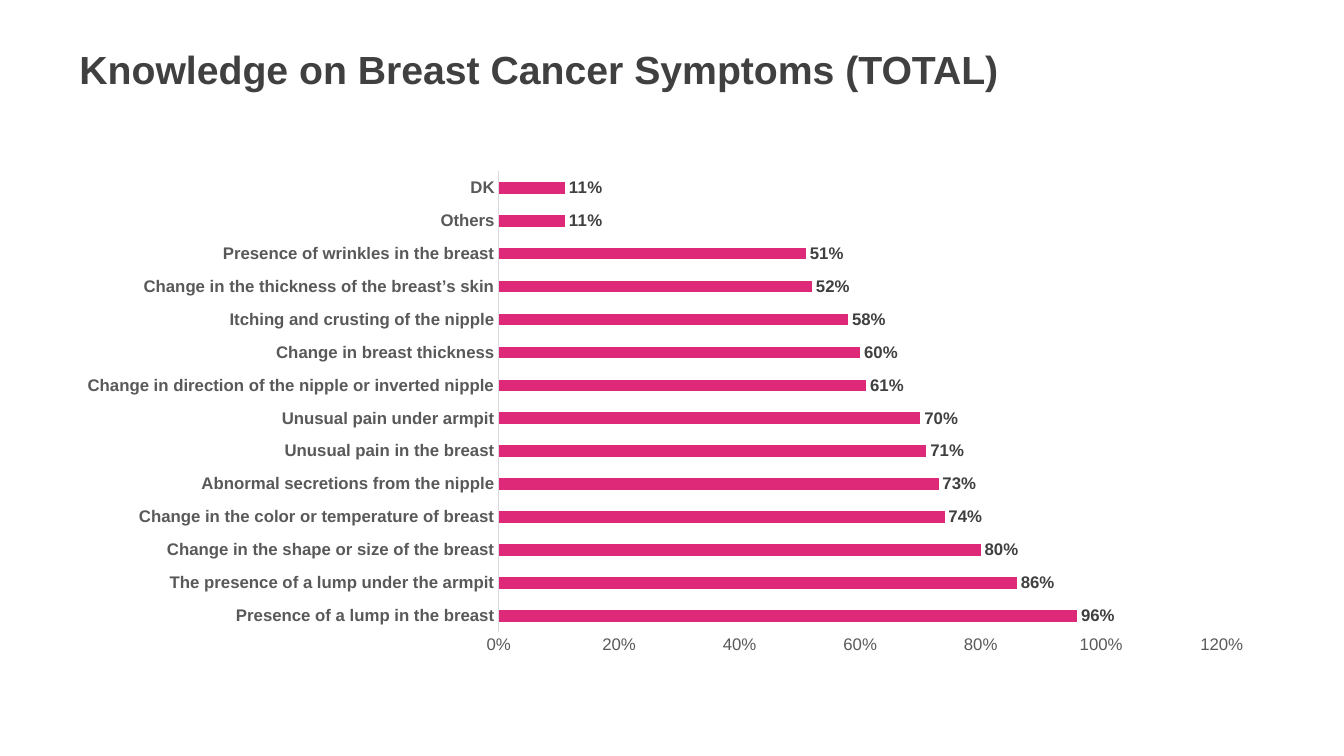
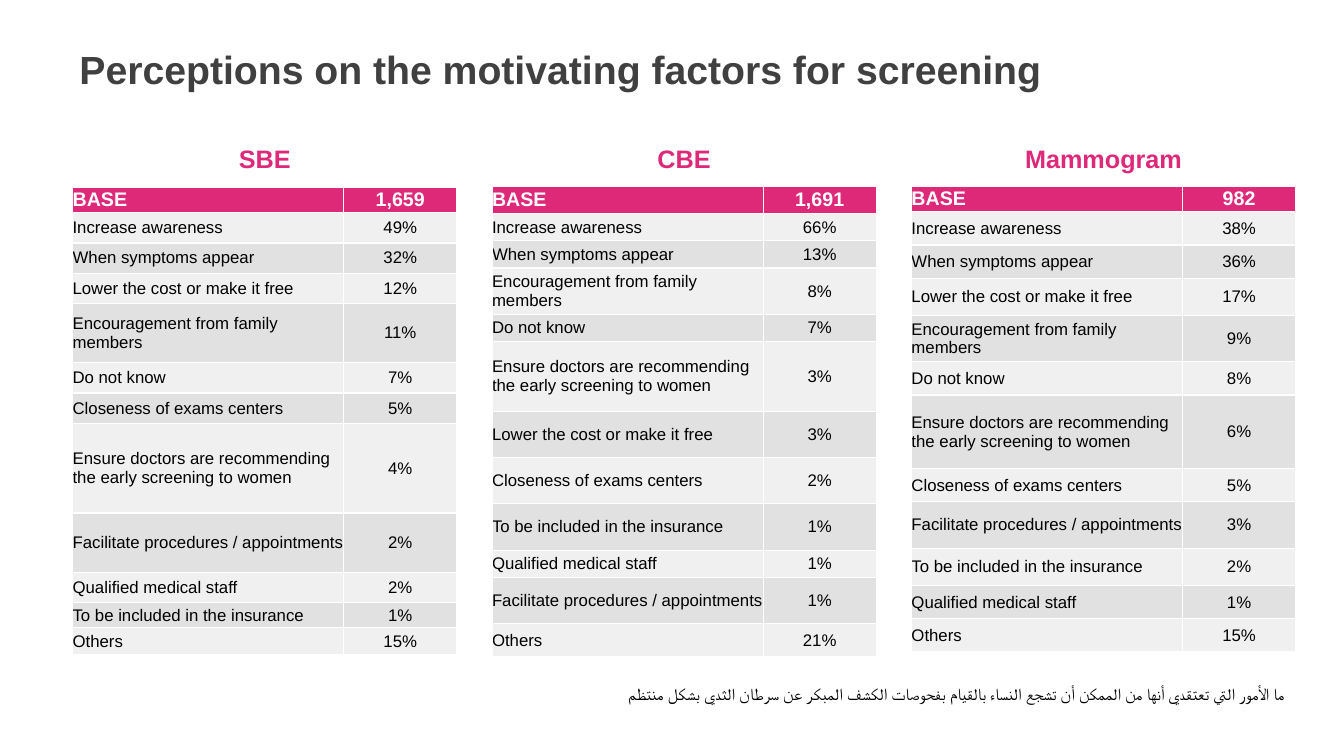
from lxml import etree
from pptx import Presentation
from pptx.chart.data import CategoryChartData
from pptx.dml.color import RGBColor
from pptx.enum.chart import XL_CHART_TYPE, XL_LABEL_POSITION, XL_TICK_MARK
from pptx.enum.text import MSO_ANCHOR, PP_ALIGN
from pptx.oxml.ns import qn
from pptx.util import Inches, Pt

BAR = XL_CHART_TYPE.BAR_CLUSTERED
OUTSIDE = XL_LABEL_POSITION.OUTSIDE_END
NO_TICK = XL_TICK_MARK.NONE
MIDDLE = MSO_ANCHOR.MIDDLE
LEFT, CENTER, RIGHT = PP_ALIGN.LEFT, PP_ALIGN.CENTER, PP_ALIGN.RIGHT

PINK, DARK, GREY, RULE = "DE2979", "404040", "595959", "D9D9D9"
WHITE, BLACK = "FFFFFF", "000000"
BANDS = ("F0F0F0", "E1E1E1")
TITLE_BOX = (0.69, 0.4, 12.06, 0.57)

SYMPTOMS = [
    ("Presence of a lump in the breast", 0.96),
    ("The presence of a lump under the armpit", 0.86),
    ("Change in the shape or size of the breast", 0.8),
    ("Change in the color or temperature of breast", 0.74),
    ("Abnormal secretions from the nipple", 0.73),
    ("Unusual pain in the breast", 0.71),
    ("Unusual pain under armpit", 0.7),
    ("Change in direction of the nipple or inverted nipple", 0.61),
    ("Change in breast thickness", 0.6),
    ("Itching and crusting of the nipple", 0.58),
    ("Change in the thickness of the breast’s skin", 0.52),
    ("Presence of wrinkles in the breast", 0.51),
    ("Others", 0.11),
    ("DK", 0.11),
]

FACTORS = {
    "aware": "Increase awareness",
    "symptoms": "When symptoms appear",
    "cost": "Lower the cost or make it free",
    "family": "Encouragement from family members",
    "unknown": "Do not know",
    "close": "Closeness of exams centers",
    "doctors": "Ensure doctors are recommending the early screening to women",
    "procedures": "Facilitate procedures / appointments",
    "staff": "Qualified medical staff",
    "insurance": "To be included in the insurance",
    "others": "Others",
}

SCREENINGS = [
    ("SBE", "1,659", 1.86, 0.25, [
        ("aware", 49, 0.3), ("symptoms", 32, 0.3), ("cost", 12, 0.3),
        ("family", 11, 0.59), ("unknown", 7, 0.3), ("close", 5, 0.3),
        ("doctors", 4, 0.89), ("procedures", 2, 0.59), ("staff", 2, 0.3),
        ("insurance", 1, 0.25), ("others", 15, 0.27)]),
    ("CBE", "1,691", 1.85, 0.27, [
        ("aware", 66, 0.27), ("symptoms", 13, 0.27), ("family", 8, 0.46),
        ("unknown", 7, 0.27), ("doctors", 3, 0.69), ("cost", 3, 0.46),
        ("close", 2, 0.46), ("insurance", 1, 0.46), ("staff", 1, 0.27),
        ("procedures", 1, 0.46), ("others", 21, 0.33)]),
    ("Mammogram", "982", 1.85, 0.25, [
        ("aware", 38, 0.33), ("symptoms", 36, 0.33), ("cost", 17, 0.37),
        ("family", 9, 0.46), ("unknown", 8, 0.33), ("doctors", 6, 0.73),
        ("close", 5, 0.33), ("procedures", 3, 0.46), ("insurance", 2, 0.37),
        ("staff", 1, 0.33), ("others", 15, 0.33)]),
]
QUESTION = ("ما الأمور التي تعتقدي أنها من الممكن أن تشجع النساء بالقيام "
            "بفحوصات الكشف المبكر عن سرطان الثدي بشكل منتظم")


def rgb(value):
    """Return the colour of a hex string."""
    return RGBColor.from_string(value)


def style_font(font, size, color, bold=False, name="Arial"):
    """Set the size, colour, weight and face of a font."""
    font.size, font.bold, font.name = Pt(size), bold, name
    font.color.rgb = rgb(color)


def write(p, text, size, color, bold=False, align=LEFT, name="Arial"):
    """Add one styled run to a paragraph."""
    p.alignment = align
    r = p.add_run()
    r.text = text
    style_font(r.font, size, color, bold, name)


def add_text(s, box, text, size, color, **style):
    """Place a wrapping text box and return its paragraph."""
    tf = s.shapes.add_textbox(*map(Inches, box)).text_frame
    tf.word_wrap = True
    p = tf.paragraphs[0]
    write(p, text, size, color, **style)
    return p


def add_slide(prs, title):
    """Add a blank slide with the shared title."""
    s = prs.slides.add_slide(prs.slide_layouts[6])
    add_text(s, TITLE_BOX, title, 28, DARK, bold=True)
    return s


def add_bar_chart(s, box, rows):
    """Place a horizontal bar chart of labelled shares."""
    data = CategoryChartData(number_format="0%")
    data.categories = [label for label, _ in rows]
    data.add_series("Series 1", [share for _, share in rows])
    chart = s.shapes.add_chart(BAR, *map(Inches, box), data).chart
    chart.has_title = chart.has_legend = False
    style_font(chart.font, 12, BLACK)

    plot = chart.plots[0]
    plot.gap_width = 182
    plot.vary_by_categories = False
    fill = plot.series[0].format.fill
    fill.solid()
    fill.fore_color.rgb = rgb(PINK)
    plot.has_data_labels = True
    labels = plot.data_labels
    labels.show_value = True
    labels.position = OUTSIDE
    labels.number_format, labels.number_format_is_linked = "0%", False
    style_font(labels.font, 12, DARK, True)

    cats, vals = chart.category_axis, chart.value_axis
    for axis in (cats, vals):
        axis.major_tick_mark = axis.minor_tick_mark = NO_TICK
        axis.has_major_gridlines = False
        style_font(axis.tick_labels.font, 12, GREY, axis is cats)
    cats.format.line.color.rgb = rgb(RULE)
    cats.format.line.width = Pt(0.75)
    vals.format.line.fill.background()
    vals.minimum_scale, vals.maximum_scale, vals.major_unit = 0, 1.2, 0.2
    vals.tick_labels.number_format = "0%"
    vals.tick_labels.number_format_is_linked = False


def add_borders(cell):
    """Draw a thin white line on each side of a cell."""
    tc_pr = cell._tc.get_or_add_tcPr()
    for side in ("a:lnL", "a:lnR", "a:lnT", "a:lnB"):
        ln = etree.SubElement(tc_pr, qn(side), w=str(Pt(1)))
        fill = etree.SubElement(ln, qn("a:solidFill"))
        etree.SubElement(fill, qn("a:srgbClr"), val=WHITE)


def fill_cell(cell, text, fill, align, **style):
    """Write one table cell with its fill and borders."""
    cell.margin_left = cell.margin_right = 0
    cell.margin_top = cell.margin_bottom = 0
    cell.vertical_anchor = MIDDLE
    add_borders(cell)
    cell.fill.solid()
    cell.fill.fore_color.rgb = rgb(fill)
    write(cell.text_frame.paragraphs[0], text, align=align, **style)


def add_factor_table(s, left, top, width, base, base_height, factors):
    """Place a table of factors under a header with the base."""
    rows = [("BASE", base, base_height)]
    rows += [(FACTORS[key], f"{pct}%", height) for key, pct, height in factors]
    total = sum(height for _, _, height in rows)
    table = s.shapes.add_table(
        len(rows), 2, *map(Inches, (left, top, width, total))).table
    value_width = 1.12
    table.columns[0].width = Inches(width - value_width)
    table.columns[1].width = Inches(value_width)
    for i, (label, value, height) in enumerate(rows):
        table.rows[i].height = Inches(height)
        if i == 0:
            fill, style = PINK, dict(size=14, color=WHITE, bold=True)
        else:
            fill, style = BANDS[(i - 1) % 2], dict(size=12, color=BLACK)
        fill_cell(table.cell(i, 0), label, fill, LEFT, **style)
        fill_cell(table.cell(i, 1), value, fill, CENTER, **style)


def symptoms_slide(prs):
    """Build the slide on known symptoms."""
    s = add_slide(prs, "Knowledge on Breast Cancer Symptoms (TOTAL)")
    add_bar_chart(s, (0.63, 1.6, 11.94, 4.99), SYMPTOMS)


def motivation_slide(prs):
    """Build the slide comparing motivating factors."""
    s = add_slide(prs, "Perceptions on the motivating factors for screening")
    first, step, width = 0.72, 4.16, 3.81
    for i, (name, base, top, base_height, factors) in enumerate(SCREENINGS):
        left = first + i * step
        add_text(s, (left, 1.37, width, 0.4), name, 18, PINK,
                 bold=True, align=CENTER)
        add_factor_table(s, left, top, width, base, base_height, factors)
    p = add_text(s, (1.27, 6.73, 11.58, 0.3), QUESTION, 12, BLACK,
                 align=RIGHT, name="Calibri")
    p._p.get_or_add_pPr().set("rtl", "1")


def main():
    """Build and save the deck."""
    prs = Presentation()
    prs.slide_width, prs.slide_height = Inches(13.33), Inches(7.5)
    symptoms_slide(prs)
    motivation_slide(prs)
    prs.save("out.pptx")


if __name__ == "__main__":
    main()
